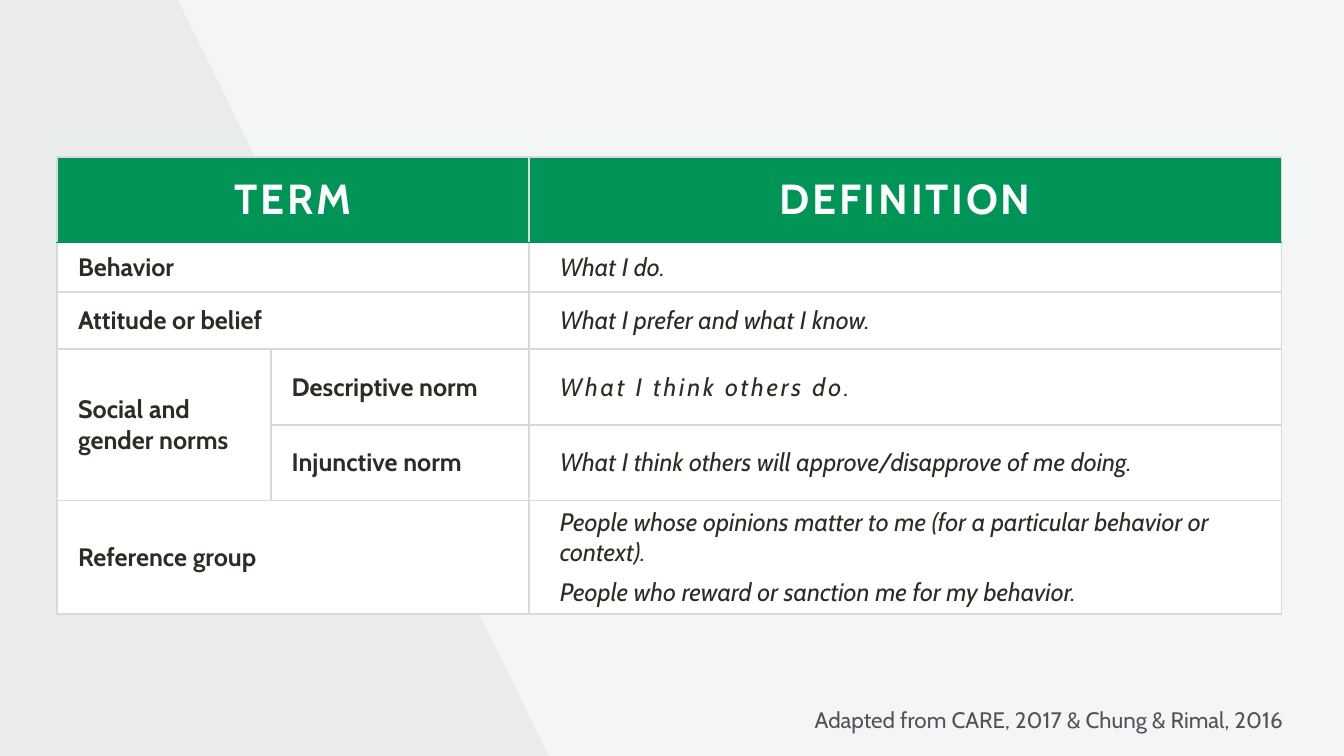
from dataclasses import dataclass

from lxml.etree import SubElement
from pptx import Presentation
from pptx.dml.color import RGBColor
from pptx.enum.text import MSO_ANCHOR, PP_ALIGN
from pptx.oxml.ns import qn
from pptx.slide import Slide
from pptx.table import Table, _Cell
from pptx.text.text import _Paragraph
from pptx.util import Inches, Pt

FONT = "Cabin"
BACKDROP = RGBColor(0xF4, 0xF5, 0xF7)
SLATE = RGBColor(0x39, 0x39, 0x41)
GREEN = RGBColor(0x00, 0x94, 0x57)
WHITE = RGBColor(0xFF, 0xFF, 0xFF)
INK = RGBColor(0x2E, 0x2C, 0x22)
GREY = RGBColor(0x52, 0x53, 0x57)
RULE = RGBColor(0xD9, 0xD9, 0xD9)

SLIDE_WIDTH, SLIDE_HEIGHT = Inches(26.67), Inches(15)

# Table grid, in percent of the slide's width and height
TABLE_LEFT, TABLE_TOP = 4.27, 20.8
COLUMNS = (15.9, 19.2, 55.98)
ROWS = (11.27, 6.53, 7.6, 10, 10, 15)


@dataclass(frozen=True)
class Style:
    size: int
    color: RGBColor
    bold: bool = False
    italic: bool = False
    spacing: int = 0
    indent: float = 0
    align: PP_ALIGN = PP_ALIGN.LEFT


@dataclass(frozen=True)
class Entry:
    row: int
    column: int
    text: str
    style: Style
    row_span: int = 1
    column_span: int = 1


HEADING = Style(60, WHITE, bold=True, spacing=4, align=PP_ALIGN.CENTER)
TERM = Style(36, INK, bold=True, indent=0.3)
DEFINITION = Style(36, INK, italic=True, indent=0.5)
SPACED_DEFINITION = Style(36, INK, italic=True, spacing=4, indent=0.5)
SOURCE = Style(32, GREY)

ENTRIES = (
    Entry(0, 0, "TERM", HEADING, column_span=2),
    Entry(0, 2, "DEFINITION", HEADING),
    Entry(1, 0, "Behavior", TERM, column_span=2),
    Entry(1, 2, "What I do.", DEFINITION),
    Entry(2, 0, "Attitude or belief", TERM, column_span=2),
    Entry(2, 2, "What I prefer and what I know.", DEFINITION),
    Entry(3, 0, "Social and gender norms", TERM, row_span=2),
    Entry(3, 1, "Descriptive norm", TERM),
    Entry(3, 2, "What I think others do.", SPACED_DEFINITION),
    Entry(4, 1, "Injunctive norm", TERM),
    Entry(4, 2, "What I think others will approve/disapprove of me doing.", DEFINITION),
    Entry(5, 0, "Reference group", TERM, column_span=2),
    Entry(5, 2, "People whose opinions matter to me (for a particular behavior or context).\n"
                "People who reward or sanction me for my behavior.", DEFINITION),
)


def across(percent: float) -> int:
    return round(SLIDE_WIDTH * percent / 100)


def down(percent: float) -> int:
    return round(SLIDE_HEIGHT * percent / 100)


def format_paragraph(paragraph: _Paragraph, style: Style) -> None:
    paragraph.alignment = style.align
    properties = paragraph._p.get_or_add_pPr()
    properties.set("marL", str(Inches(style.indent)))
    properties.set("indent", "0")
    for run in paragraph.runs:
        font = run.font
        font.name, font.size = FONT, Pt(style.size)
        font.bold, font.italic = style.bold, style.italic
        font.color.rgb = style.color
        run._r.get_or_add_rPr().set("spc", str(style.spacing * 100))


def add_border(cell: _Cell, side: str, color: RGBColor, width: float) -> None:
    line = SubElement(cell._tc.get_or_add_tcPr(), qn(f"a:ln{side}"), w=str(Pt(width)))
    SubElement(SubElement(line, qn("a:solidFill")), qn("a:srgbClr"), val=str(color))


def style_cell(cell: _Cell, row: int) -> None:
    green_edge = {0: "B", 1: "T"}.get(row)
    for side in "LRTB":
        if side == green_edge:
            add_border(cell, side, GREEN, 1)
        else:
            add_border(cell, side, RULE, 3)
    cell.fill.solid()
    cell.fill.fore_color.rgb = WHITE if row else GREEN
    cell.vertical_anchor = MSO_ANCHOR.MIDDLE
    cell.margin_left = cell.margin_right = Inches(0.11)
    cell.margin_top = cell.margin_bottom = Inches(0.06)


def fill_entry(table: Table, entry: Entry) -> None:
    cell = table.cell(entry.row, entry.column)
    if entry.row_span * entry.column_span > 1:
        cell.merge(table.cell(entry.row + entry.row_span - 1,
                              entry.column + entry.column_span - 1))
    cell.text_frame.text = entry.text
    for index, paragraph in enumerate(cell.text_frame.paragraphs):
        format_paragraph(paragraph, entry.style)
        if index:
            paragraph.space_before = Pt(12)


def add_slanted_panel(slide: Slide) -> None:
    builder = slide.shapes.build_freeform(0, 0)
    builder.add_line_segments([(across(13.24), 0), (across(40.83), down(100)),
                               (0, down(100))], close=True)
    panel = builder.convert_to_shape()
    panel.shadow.inherit = False
    panel.line.fill.background()
    panel.fill.solid()
    panel.fill.fore_color.rgb = SLATE
    color = panel._element.spPr.find(qn("a:solidFill"))[0]
    SubElement(color, qn("a:alpha"), val="5000")


def add_source(slide: Slide) -> None:
    source = slide.shapes.add_textbox(across(60.25), down(93.13), across(39.75), down(4.27))
    source.text_frame.word_wrap = True
    source.text_frame.text = "Adapted from CARE, 2017 & Chung & Rimal, 2016"
    format_paragraph(source.text_frame.paragraphs[0], SOURCE)


def add_terms_table(slide: Slide) -> None:
    table = slide.shapes.add_table(
        len(ROWS), len(COLUMNS), across(TABLE_LEFT), down(TABLE_TOP),
        across(sum(COLUMNS)), down(sum(ROWS))).table
    table.horz_banding = False
    for column, share in zip(table.columns, COLUMNS):
        column.width = across(share)
    for index, share in enumerate(ROWS):
        table.rows[index].height = down(share)
        for cell in table.rows[index].cells:
            style_cell(cell, index)
    for entry in ENTRIES:
        fill_entry(table, entry)


def main() -> None:
    presentation = Presentation()
    presentation.slide_width, presentation.slide_height = SLIDE_WIDTH, SLIDE_HEIGHT
    slide = presentation.slides.add_slide(presentation.slide_layouts[6])
    slide.background.fill.solid()
    slide.background.fill.fore_color.rgb = BACKDROP

    # Backdrop, source line, then the table on top
    add_slanted_panel(slide)
    add_source(slide)
    add_terms_table(slide)
    presentation.save("out.pptx")


if __name__ == "__main__":
    main()
